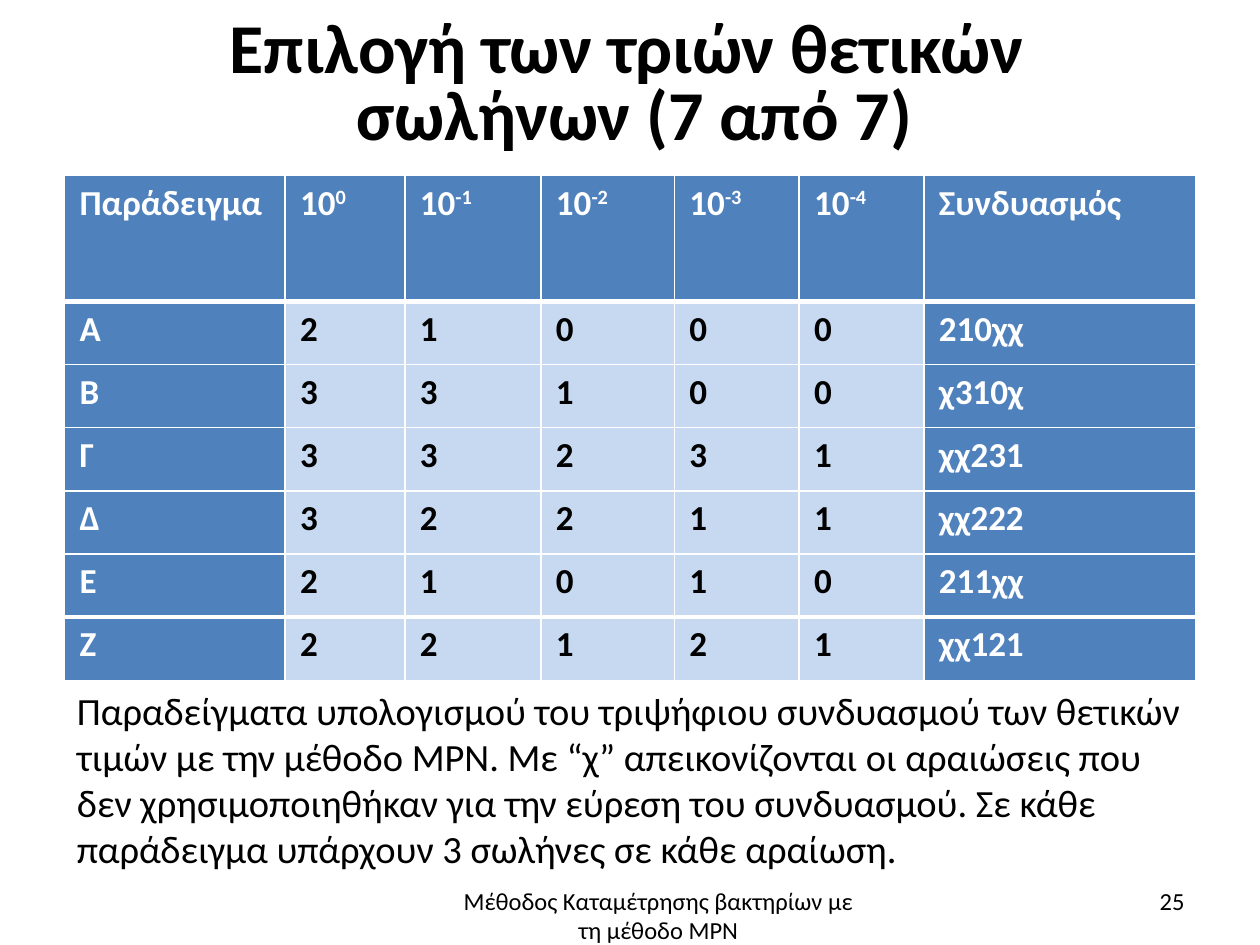
from dataclasses import dataclass

from lxml import etree
from pptx import Presentation
from pptx.dml.color import RGBColor
from pptx.enum.text import MSO_ANCHOR, PP_ALIGN
from pptx.oxml.ns import qn
from pptx.util import Pt

LEFT, CENTER, RIGHT, JUSTIFY = PP_ALIGN.LEFT, PP_ALIGN.CENTER, PP_ALIGN.RIGHT, PP_ALIGN.JUSTIFY
TOP, MIDDLE = MSO_ANCHOR.TOP, MSO_ANCHOR.MIDDLE


@dataclass(frozen=True)
class Theme:
    font: str = "Calibri"
    black: str = "000000"
    white: str = "FFFFFF"
    blue: str = "4F81BD"
    pale: str = "C6D9F1"
    title: int = 40
    body: int = 22
    cell: int = 20
    footer: int = 14
    thin: int = 1
    thick: int = 3


T = Theme()

TITLE = ["Επιλογή των τριών θετικών ", "σωλήνων (7 από 7)"]
HEADER = [("Παράδειγμα", ""), ("10", "0"), ("10", "-1"), ("10", "-2"),
          ("10", "-3"), ("10", "-4"), ("Συνδυασμός", "")]
EXAMPLES = [
    ("Α", "21000", "210χχ"),
    ("Β", "33100", "χ310χ"),
    ("Γ", "33231", "χχ231"),
    ("Δ", "32211", "χχ222"),
    ("Ε", "21010", "211χχ"),
    ("Ζ", "22121", "χχ121"),
]
COL_WIDTHS = [126, 68.4, 77.8, 76.3, 71.3, 71.3, 155.5]
ROW_HEIGHTS = [72] + [36.1] * len(EXAMPLES)
CAPTION = ("Παραδείγματα υπολογισμού του τριψήφιου συνδυασμού των θετικών τιμών "
           "με την μέθοδο MPN. Με “χ” απεικονίζονται οι αραιώσεις που δεν "
           "χρησιμοποιηθήκαν για την εύρεση του συνδυασμού. Σε κάθε παράδειγμα "
           "υπάρχουν 3 σωλήνες σε κάθε αραίωση.")
FOOTER = "Μέθοδος Καταμέτρησης βακτηρίων με τη μέθοδο ΜΡΝ"


def add_run(p, text, size, color=T.black, bold=False):
    r = p.add_run()
    r.text = text
    r.font.name = T.font
    r.font.size = Pt(size)
    r.font.bold = bold
    r.font.color.rgb = RGBColor.from_string(color)
    return r


def add_box(s, box, align=LEFT, anchor=TOP):
    sp = s.shapes.add_textbox(*map(Pt, box))
    tf = sp.text_frame
    tf.word_wrap = True
    tf.vertical_anchor = anchor
    p = tf.paragraphs[0]
    p.alignment = align
    return tf, p


def add_title(s, box):
    tf, p = add_box(s, box, CENTER, MIDDLE)
    tf.margin_left = tf.margin_right = tf.margin_bottom = 0
    tf.margin_top = Pt(1.4)
    p.line_spacing = 0.8
    for i, line in enumerate(TITLE):
        if i:
            p.add_line_break()
        add_run(p, line, T.title, bold=True)


def add_text(s, box, text, size, align=LEFT, anchor=TOP):
    tf, p = add_box(s, box, align, anchor)
    add_run(p, text, size)


def set_borders(cell, row):
    def weight(edge):
        return T.thick if edge in (1, len(EXAMPLES)) else T.thin

    tc_pr = cell._tc.get_or_add_tcPr()
    widths = {"a:lnL": T.thin, "a:lnR": T.thin, "a:lnT": weight(row), "a:lnB": weight(row + 1)}
    for tag, width in widths.items():
        ln = etree.SubElement(tc_pr, qn(tag), w=str(Pt(width)))
        fill = etree.SubElement(ln, qn("a:solidFill"))
        etree.SubElement(fill, qn("a:srgbClr"), val=T.white)


def fill_cell(cell, row, text, power, fill, color):
    set_borders(cell, row)
    cell.fill.solid()
    cell.fill.fore_color.rgb = RGBColor.from_string(fill)
    cell.margin_left = cell.margin_right = Pt(8.64)
    cell.margin_top = cell.margin_bottom = 0
    p = cell.text_frame.paragraphs[0]
    p.alignment = JUSTIFY
    p.line_spacing = 1.15
    add_run(p, text, T.cell, color, True)
    if power:
        r = add_run(p, power, T.cell, color, True)
        r.font._element.set("baseline", "30000")


def add_examples(s, box):
    rows = [HEADER] + [[(text, "") for text in (name, *counts, code)]
                       for name, counts, code in EXAMPLES]
    table = s.shapes.add_table(len(rows), len(HEADER), *map(Pt, box)).table
    for col, width in zip(table.columns, COL_WIDTHS):
        col.width = Pt(width)
    for i, (cells, height) in enumerate(zip(rows, ROW_HEIGHTS)):
        table.rows[i].height = Pt(height)
        for j, (text, power) in enumerate(cells):
            is_label = i == 0 or j in (0, len(HEADER) - 1)
            fill, color = (T.blue, T.white) if is_label else (T.pale, T.black)
            fill_cell(table.cell(i, j), i, text, power, fill, color)


def main():
    prs = Presentation()
    prs.slide_width, prs.slide_height = Pt(720), Pt(540)
    s = prs.slides.add_slide(prs.slide_layouts[6])
    add_title(s, (31, 3.6, 663, 90.7))
    add_examples(s, (36.9, 100.2, sum(COL_WIDTHS), sum(ROW_HEIGHTS)))
    add_text(s, (36.9, 388.8, 652.3, 113.8), CAPTION, T.body)
    add_text(s, (250.6, 502.6, 251.3, 39.6), FOOTER, T.footer, CENTER)
    add_text(s, (516.2, 500.4, 167.8, 28.8), "25", T.footer, RIGHT, MIDDLE)
    prs.save("out.pptx")


if __name__ == "__main__":
    main()
